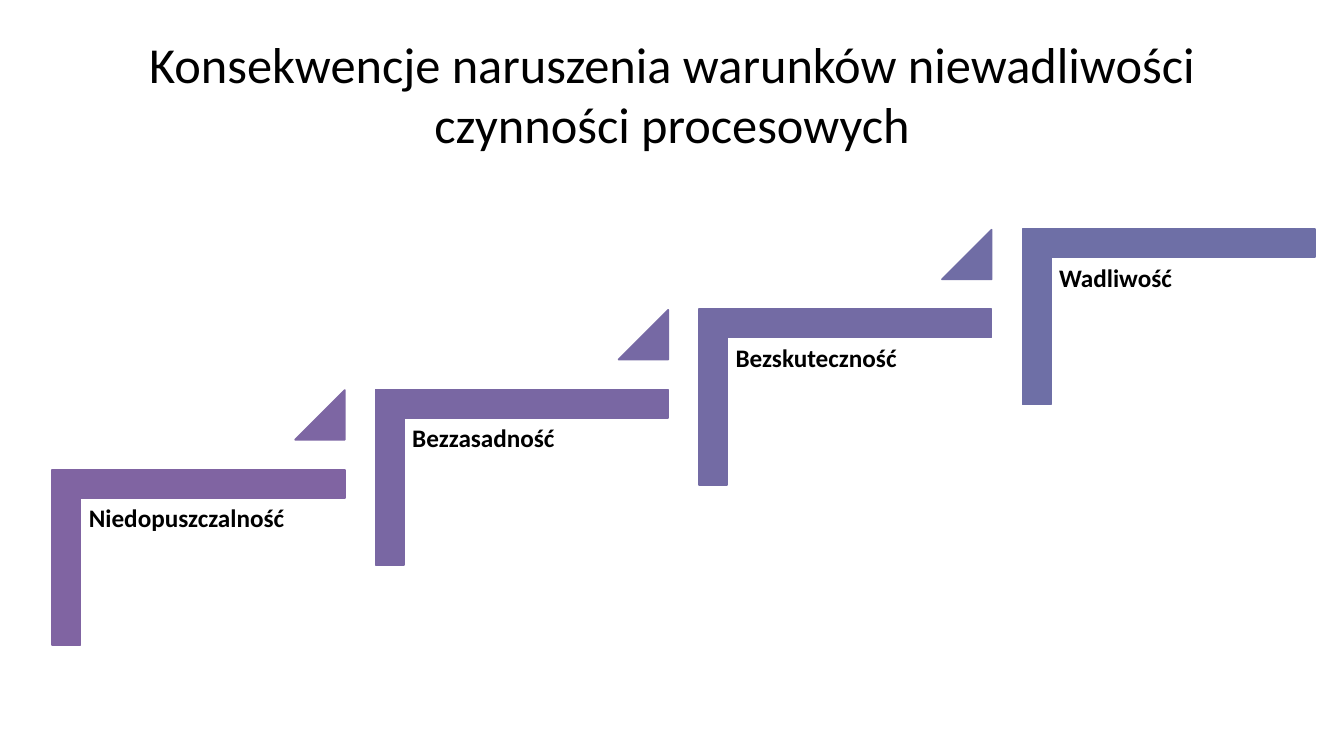
from dataclasses import dataclass

from pptx import Presentation
from pptx.dml.color import RGBColor
from pptx.enum.shapes import MSO_SHAPE
from pptx.enum.text import MSO_ANCHOR, PP_ALIGN
from pptx.util import Cm, Pt


@dataclass(frozen=True)
class Theme:
    """Colours, font and type sizes of the slide."""
    font: str = "Calibri"
    text: str = "000000"
    title_size: int = 36
    label_size: int = 18
    line_width: float = 1.25
    corners: tuple = ("8064A2", "7967A3", "736BA4", "6E6FA6")
    triangles: tuple = ("7D66A3", "7669A4", "706DA5")


class Staircase:
    """Draws the title and the rising steps on one slide."""

    def __init__(self, s, theme):
        self.theme = theme
        self.s = s
        self.steps = s.shapes.add_group_shape().shapes

    def text(self, shapes, text, box, size, inset=(0.25, 0.13), bold=False,
             align=PP_ALIGN.LEFT, anchor=MSO_ANCHOR.TOP, spacing=1.0):
        """Add a wrapped text box; box and inset are in centimetres."""
        tf = shapes.add_textbox(*map(Cm, box)).text_frame
        tf.word_wrap = True
        tf.vertical_anchor = anchor
        tf.margin_left = tf.margin_right = Cm(inset[0])
        tf.margin_top = tf.margin_bottom = Cm(inset[1])
        p = tf.paragraphs[0]
        p.text = text
        p.alignment = align
        p.line_spacing = spacing
        p.font.name = self.theme.font
        p.font.size = Pt(size)
        p.font.bold = bold
        p.font.color.rgb = RGBColor.from_string(self.theme.text)

    def title(self, text):
        """Add the centred slide title."""
        self.text(self.s.shapes, text, (1.7, 0.76, 30.48, 3.18),
                  self.theme.title_size, align=PP_ALIGN.CENTER,
                  anchor=MSO_ANCHOR.MIDDLE)

    def shape(self, kind, box, color, adjustments, rotation=0):
        """Add a preset shape with matching fill and outline."""
        sp = self.steps.add_shape(kind, *map(Cm, box))
        sp.shadow.inherit = False
        sp.rotation = rotation
        for i, value in enumerate(adjustments):
            sp.adjustments[i] = value
        rgb = RGBColor.from_string(color)
        sp.fill.solid()
        sp.fill.fore_color.rgb = rgb
        sp.line.color.rgb = rgb
        sp.line.width = Pt(self.theme.line_width)

    def step(self, i, label):
        """Add step i: its corner, label and, except on the last, triangle."""
        dx, dy = 8.15 * i, -2.02 * i
        self.shape(MSO_SHAPE.CORNER, (2.79 + dx, 10.36 + dy, 4.42, 7.37),
                   self.theme.corners[i], (0.161, 0.161), rotation=90)
        self.text(self.steps, label, (2.06 + dx, 12.57 + dy, 6.65, 5.84),
                  self.theme.label_size, inset=(0.18, 0.18), bold=True,
                  spacing=0.9)
        if i < len(self.theme.triangles):
            self.shape(MSO_SHAPE.ISOSCELES_TRIANGLE,
                       (7.44 + dx, 9.83 + dy, 1.25, 1.25),
                       self.theme.triangles[i], (1,))


def main():
    """Build and save the slide."""
    prs = Presentation()
    prs.slide_width, prs.slide_height = Cm(33.87), Cm(19.05)
    stairs = Staircase(prs.slides.add_slide(prs.slide_layouts[6]), Theme())
    stairs.title("Konsekwencje naruszenia warunków niewadliwości "
                 "czynności procesowych")
    labels = ("Niedopuszczalność", "Bezzasadność", "Bezskuteczność", "Wadliwość")
    for i, label in enumerate(labels):
        stairs.step(i, label)
    prs.save("out.pptx")


if __name__ == "__main__":
    main()
